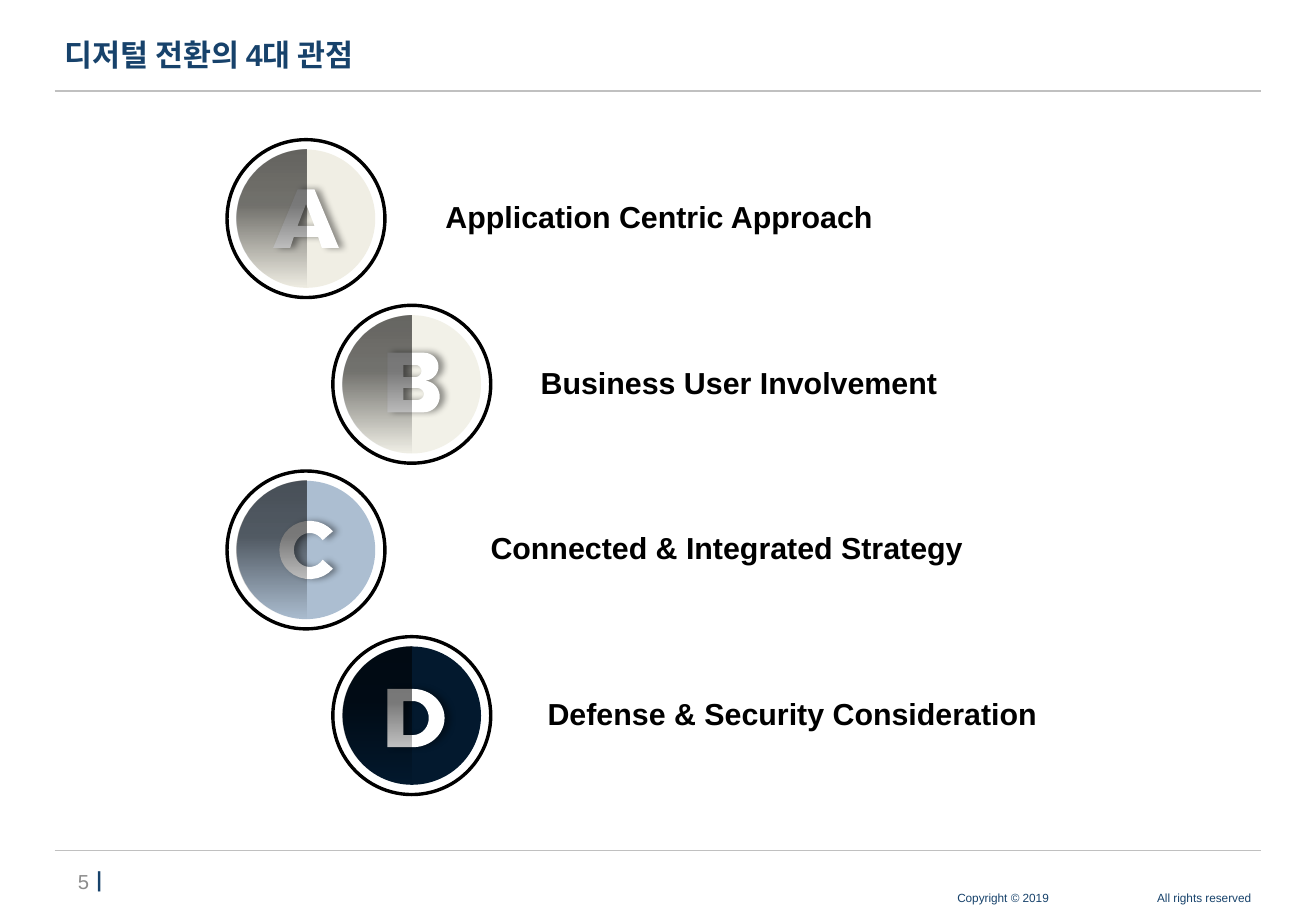
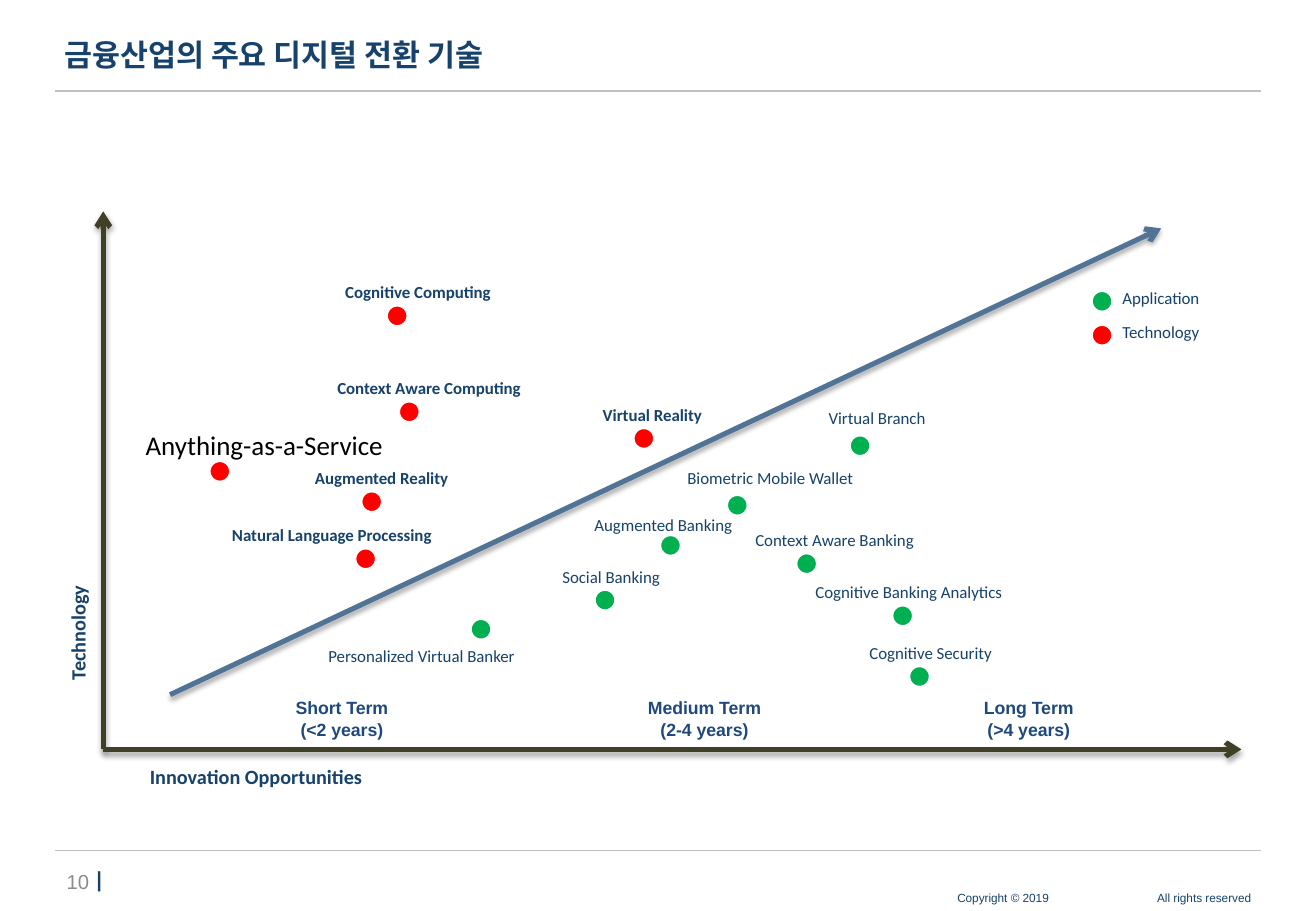
import math

import pptx
import pptx.dml.color
import pptx.enum.shapes
import pptx.enum.text
import pptx.oxml.ns
import pptx.util
from lxml import etree

Pt = pptx.util.Pt
RGBColor = pptx.dml.color.RGBColor
Shape = pptx.enum.shapes.MSO_SHAPE
Align = pptx.enum.text.PP_ALIGN
qn = pptx.oxml.ns.qn

NAVY = RGBColor.from_string("17426B")
TERM_BLUE = RGBColor.from_string("1F497D")
TREND_BLUE = RGBColor.from_string("517496")
AXIS_OLIVE = RGBColor.from_string("404027")
RULE_GREY = RGBColor.from_string("C0C0C0")
PAGE_GREY = RGBColor.from_string("8C8C8C")
BLACK = RGBColor.from_string("000000")
WHITE = RGBColor.from_string("FFFFFF")
RED = RGBColor.from_string("FF0000")
GREEN = RGBColor.from_string("00B050")
IVORY = RGBColor.from_string("F0EEE4")
CREAM = RGBColor.from_string("F2F1E8")
PALE_BLUE = RGBColor.from_string("ACBED1")
MIDNIGHT = RGBColor.from_string("03192E")

KOREAN_FONT = "Noto Sans CJK KR"
LABEL_WIDTH = 184
LABEL_RISE = 23.5
LETTER_UNIT = 0.72

# Letter, disc colour, caption, caption left.
PERSPECTIVES = [
    ("A", IVORY, "Application Centric Approach", 257),
    ("B", CREAM, "Business User Involvement", 313.4),
    ("C", PALE_BLUE, "Connected & Integrated Strategy", 283.7),
    ("D", MIDNIGHT, "Defense & Security Consideration", 317.5),
]

# Label, dot centre, label centre and, where unusual, the label's rise above the dot.
TECHNOLOGIES = [
    ("Cognitive Computing", 235.4, 187.2, 247.7),
    ("Context Aware Computing", 242.6, 244.1, 254.2),
    ("Virtual Reality", 381.6, 259.9, 386.6),
    ("Augmented Reality", 220.3, 297.4, 226.1),
    ("Natural Language Processing", 216.7, 331.2, 196.6),
]
APPLICATIONS = [
    ("Virtual Branch", 509.8, 264.2, 519.8, 25.9),
    ("Biometric Mobile Wallet", 437, 299.5, 456.5, 25.9),
    ("Augmented Banking", 397.4, 323.3, 393.1, 21.6),
    ("Context Aware Banking", 478.1, 334.1, 494.6),
    ("Social Banking", 358.6, 355.7, 362.2),
    ("Cognitive Banking Analytics", 535, 365, 538.6),
    ("Personalized Virtual Banker", 285.1, 373, 249.8, -6.4),
    ("Cognitive Security", 545, 401, 551.5),
]
LEGEND = [("Application", 178.6, GREEN), ("Technology", 198.7, RED)]
TERMS = [
    ("Short Term\n(<2 years)", 202.7),
    ("Medium Term\n(2-4 years)", 417.6),
    ("Long Term\n(>4 years)", 609.8),
]


def arc(x, y, radius_x, radius_y, start=-90, end=90, steps=24):
    angles = [math.radians(start + (end - start) * step / steps)
              for step in range(steps + 1)]
    return [(x + radius_x * math.cos(angle), y + radius_y * math.sin(angle))
            for angle in angles]


def bowl(left, x, y, radius_x, radius_y):
    """Return a contour with a straight left side and a round right side."""
    return [(left, y - radius_y), *arc(x, y, radius_x, radius_y), (left, y + radius_y)]


def letter_contours():
    """Return each letter's outline and holes around the disc centre."""
    right_leg = [(7, -24), (27, 24), (13, 24), (10, 15)]
    left_leg = [(-x, y) for x, y in reversed(right_leg)]
    return {
        "A": [right_leg + left_leg, [(0, -12), (7, 6), (-7, 6)]],
        "B": [bowl(-20, 10, -14.5, 12, 11.5)[:-1] + bowl(-20, 10, 10, 13, 13)[1:],
              bowl(-7, 3, -11, 5, 5), bowl(-7, 4, 8, 6, 5)],
        "C": [arc(3, 0, 25, 24, 40, 320) + arc(3, 0, 13, 14, 325, 35)],
        "D": [bowl(-20, 1, 2, 26, 24), bowl(-7, 1, 2, 13, 14)],
    }


def add_black(parent, opacity):
    color = etree.SubElement(parent, qn("a:srgbClr"), val=str(BLACK))
    etree.SubElement(color, qn("a:alpha"), val=str(opacity * 1000))


def cast_shadow(shape, opacity, blur, distance, angle):
    properties = shape._element.spPr
    effects = properties.find(qn("a:effectLst"))
    if effects is None:
        effects = etree.SubElement(properties, qn("a:effectLst"))
    shadow = etree.SubElement(
        effects, qn("a:outerShdw"), blurRad=str(int(Pt(blur))),
        dist=str(int(Pt(distance))), dir=str(angle * 60000), algn="ctr",
        rotWithShape="0")
    add_black(shadow, opacity)


def set_font(font, size, color, bold=False, name="Arial"):
    font.size, font.bold, font.name = Pt(size), bold, name
    font.color.rgb = color
    etree.SubElement(font._element, qn("a:ea"), typeface=KOREAN_FONT)


class Deck:
    def __init__(self):
        self.presentation = pptx.Presentation()
        self.presentation.slide_width = Pt(780)
        self.presentation.slide_height = Pt(540)
        self.letters = letter_contours()
        self.slide = None

    def new_slide(self, title, page):
        self.slide = self.presentation.slides.add_slide(
            self.presentation.slide_layouts[5])
        for y in (54, 504):
            self.line(32.4, y, 747.4, y, RULE_GREY, 0.75)
        for notice, left, align in (("Copyright © 2019", 567.4, Align.LEFT),
                                    ("All rights reserved", 641.6, Align.RIGHT)):
            self.text(notice, left, 524.2, 100, 14.4, 7, align=align, side=0)
        shape = self.slide.shapes.title
        shape.left, shape.top, shape.width, shape.height = map(Pt, (38.2, 15.1, 702.7, 33.8))
        self.fill_text(shape, title, 18, bold=True, side=0, middle=True)
        number = self.text(page, 14.8, 511.9, 50, 21.6, 12, PAGE_GREY,
                           align=Align.RIGHT, side=0, middle=True)
        bar = number.text_frame.paragraphs[0].add_run()
        bar.text = "┃"
        set_font(bar.font, 12, NAVY, True, KOREAN_FONT)

    def fill_text(self, shape, text, size, color=NAVY, bold=False, name="Arial",
                  align=Align.LEFT, side=7.2, middle=False):
        frame = shape.text_frame
        frame.word_wrap = True
        frame.auto_size = pptx.enum.text.MSO_AUTO_SIZE.NONE
        anchors = pptx.enum.text.MSO_ANCHOR
        frame.vertical_anchor = anchors.MIDDLE if middle else anchors.TOP
        frame.margin_left = frame.margin_right = Pt(side)
        frame.margin_top = frame.margin_bottom = Pt(3.6)
        frame.text = text
        for paragraph in frame.paragraphs:
            paragraph.alignment = align
            set_font(paragraph.font, size, color, bold, name)

    def text(self, text, left, top, width, height, size, color=NAVY, **style):
        shape = self.slide.shapes.add_textbox(*map(Pt, (left, top, width, height)))
        self.fill_text(shape, text, size, color, **style)
        return shape

    def label(self, text, center, top, size=10, color=NAVY, bold=False,
              name="Calibri", height=19.4):
        self.text(text, center - LABEL_WIDTH / 2, top, LABEL_WIDTH, height, size,
                  color, bold=bold, name=name, align=Align.CENTER)

    def line(self, x1, y1, x2, y2, color, width):
        connector = self.slide.shapes.add_connector(
            pptx.enum.shapes.MSO_CONNECTOR.STRAIGHT, *map(Pt, (x1, y1, x2, y2)))
        connector.line.color.rgb = color
        connector.line.width = Pt(width)
        etree.SubElement(connector._element.spPr, qn("a:effectLst"))
        return connector

    def arrow(self, x1, y1, x2, y2, color):
        connector = self.line(x1, y1, x2, y2, color, 3)
        outline = connector._element.spPr.find(qn("a:ln"))
        etree.SubElement(outline, qn("a:tailEnd"), type="arrow")
        cast_shadow(connector, 35, 3.1, 1.8, 90)

    def paint(self, shape, fill=None, outline=None):
        shape.shadow.inherit = False
        if fill is None:
            shape.fill.background()
        else:
            shape.fill.solid()
            shape.fill.fore_color.rgb = fill
        if outline is None:
            shape.line.fill.background()
        else:
            shape.line.color.rgb = outline
            shape.line.width = Pt(2)

    def round_shape(self, x, y, size, fill=None, outline=None, kind=Shape.OVAL):
        """Add a round preset shape centred on x, y."""
        shape = self.slide.shapes.add_shape(
            kind, *map(Pt, (x - size / 2, y - size / 2, size, size)))
        self.paint(shape, fill, outline)
        return shape

    def letter(self, letter, x, y):
        builder = None
        for contour in self.letters[letter]:
            points = [(Pt(x + LETTER_UNIT * dx), Pt(y + LETTER_UNIT * dy))
                      for dx, dy in contour]
            if builder is None:
                builder = self.slide.shapes.build_freeform(*points[0])
            else:
                builder.move_to(*points[0])
            builder.add_line_segments(points[1:], close=True)
        shape = builder.convert_to_shape()
        self.paint(shape, WHITE)
        cast_shadow(shape, 40, 4, 3, 0)

    def half_shade(self, x, y, size):
        """Darken the left half of a disc, fading out downwards."""
        shape = self.round_shape(x, y, size, kind=Shape.CHORD)
        shape.adjustments[0], shape.adjustments[1] = 54, 162
        shape.fill.gradient()
        shape.fill.gradient_angle = 270
        stops = shape._element.spPr.find(qn("a:gradFill")).find(qn("a:gsLst"))
        for stop in list(stops):
            stops.remove(stop)
        for position, opacity in ((0, 58), (41, 52), (100, 0)):
            add_black(etree.SubElement(stops, qn("a:gs"), pos=str(position * 1000)), opacity)

    def badge(self, letter, color, x, y):
        self.round_shape(x, y, 82, color)
        self.round_shape(x, y, 93.6, outline=BLACK)
        self.letter(letter, x, y)
        self.half_shade(x, y, 82)

    def dot(self, x, y, color):
        self.round_shape(x, y, 13, color, WHITE)

    def plot(self, color, bold, text, x, y, center, rise=LABEL_RISE):
        self.dot(x, y, color)
        self.label(text, center, y - rise, bold=bold)


def main():
    deck = Deck()
    deck.new_slide("디저털 전환의 4대 관점", "5")
    for row, (letter, color, caption, left) in enumerate(PERSPECTIVES):
        x = 181.4 + 62.7 * (row % 2)
        y = 129.6 + 98.2 * row
        deck.text(caption, left, y - 15.8, 380, 32, 18, BLACK, bold=True)
        deck.badge(letter, color, x, y)

    deck.new_slide("금융산업의 주요 디지털 전환 기술", "10")
    origin = (61.2, 444.2)
    deck.arrow(100.8, 411.8, 688.3, 135.4, TREND_BLUE)
    deck.arrow(*origin, origin[0], 125.3, AXIS_OLIVE)
    deck.arrow(*origin, 735.8, origin[1], AXIS_OLIVE)
    axis_style = {"bold": True, "name": "Calibri", "align": Align.CENTER}
    vertical = deck.text("Technology", -23, 364.3, 138, 21.6, 12, **axis_style)
    vertical.rotation = 270
    deck.text("Innovation Opportunities", 59.8, 449.3, LABEL_WIDTH, 21.6, 12, **axis_style)
    deck.dot(130.3, 279.4, RED)
    deck.text("Anything-as-a-Service", 79.2, 250.6, LABEL_WIDTH, 26.6, 16, BLACK,
              name="Calibri")
    for technology in TECHNOLOGIES:
        deck.plot(RED, True, *technology)
    for application in APPLICATIONS:
        deck.plot(GREEN, False, *application)
    for text, y, color in LEGEND:
        deck.plot(color, False, text, 653.2, y, 688, 11.5)
    for term, center in TERMS:
        deck.label(term, center, 409.7, 10.5, TERM_BLUE, True, "Arial", 33.8)
    deck.presentation.save("out.pptx")


if __name__ == "__main__":
    main()
